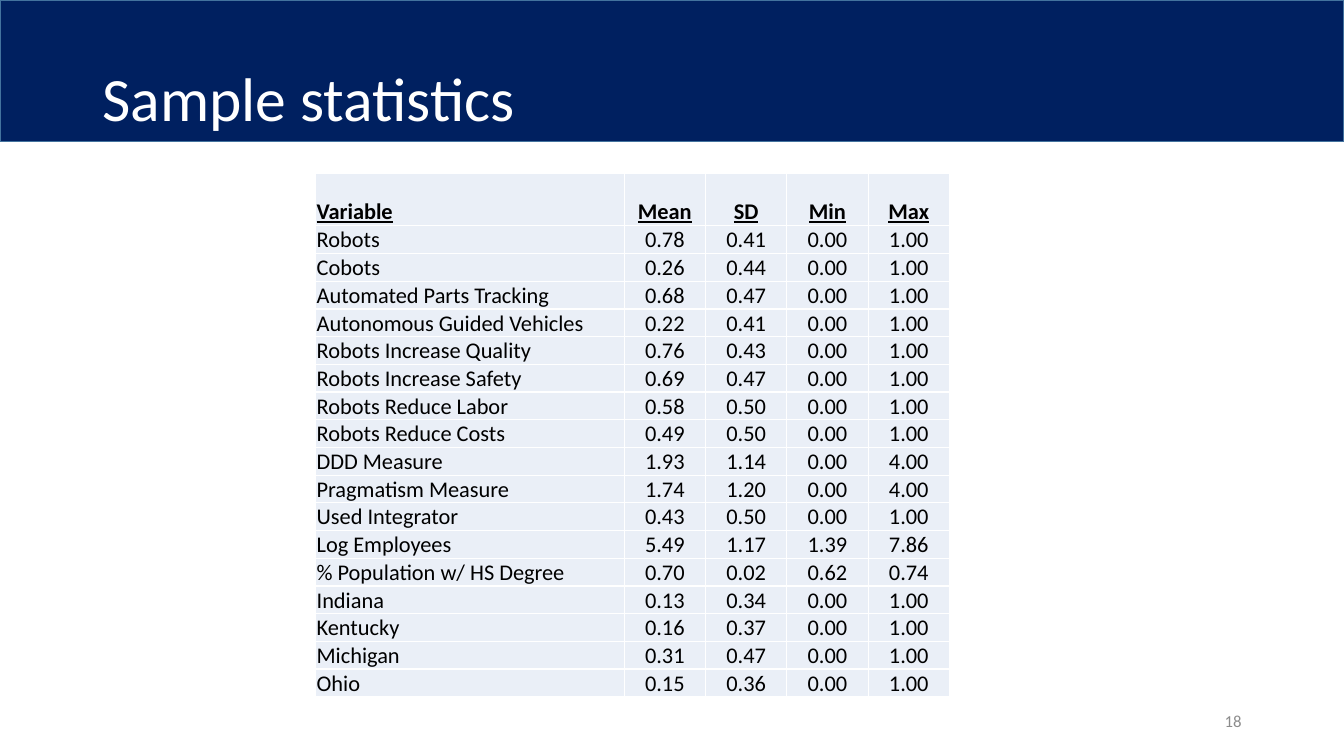
from dataclasses import dataclass

from lxml.etree import SubElement
from pptx import Presentation
from pptx.dml.color import RGBColor as Rgb
from pptx.enum.shapes import MSO_SHAPE as Preset
from pptx.enum.text import MSO_ANCHOR as Anchor, PP_ALIGN as Align
from pptx.oxml.ns import qn
from pptx.util import Cm, Pt


@dataclass(frozen=True)
class Theme:
    font: str = "Calibri"
    navy: str = "002060"
    band_edge: str = "43739E"
    cell: str = "EAEFF7"
    white: str = "FFFFFF"
    black: str = "000000"
    grey: str = "8C8C8C"
    title_size: int = 44
    table_size: int = 16
    number_size: int = 12


class SlideBuilder:
    def __init__(self, slide, theme):
        self.slide = slide
        self.theme = theme

    def set_text(self, frame, text, size, color, align, bold=False):
        frame.text = text
        paragraph = frame.paragraphs[0]
        paragraph.alignment = align
        font = paragraph.runs[0].font
        font.name = self.theme.font
        font.size = Pt(size)
        font.color.rgb = Rgb.from_string(color)
        font.bold = font.underline = bold
        return paragraph

    def title(self, text, left, top, width, height):
        heading = self.slide.shapes.title
        heading.left, heading.top = Cm(left), Cm(top)
        heading.width, heading.height = Cm(width), Cm(height)
        heading.text_frame.vertical_anchor = Anchor.MIDDLE
        line = self.set_text(heading.text_frame, text, self.theme.title_size,
                             self.theme.white, Align.LEFT)
        line.line_spacing = 0.9

    def band(self, width, height):
        banner = self.slide.shapes.add_shape(
            Preset.RECTANGLE, 0, 0, Cm(width), Cm(height))
        banner.shadow.inherit = False
        banner.fill.solid()
        banner.fill.fore_color.rgb = Rgb.from_string(self.theme.navy)
        banner.line.color.rgb = Rgb.from_string(self.theme.band_edge)
        banner.line.width = Pt(1)
        self.slide.shapes.title.element.addprevious(banner.element)

    def page_number(self, text, left, top, width, height):
        number = self.slide.shapes.add_textbox(
            Cm(left), Cm(top), Cm(width), Cm(height))
        frame = number.text_frame
        frame.word_wrap = True
        frame.vertical_anchor = Anchor.MIDDLE
        self.set_text(frame, text, self.theme.number_size,
                      self.theme.grey, Align.RIGHT)

    def borders(self, cell):
        properties = cell._tc.get_or_add_tcPr()
        for side in ("lnL", "lnR", "lnT", "lnB"):
            edge = SubElement(properties, qn(f"a:{side}"), w=str(Pt(1)))
            paint = SubElement(edge, qn("a:solidFill"))
            SubElement(paint, qn("a:srgbClr"), val=self.theme.white)

    def table(self, rows, left, top, height, widths, header_height, row_height):
        holder = self.slide.shapes.add_table(
            len(rows), len(widths), Cm(left), Cm(top),
            Cm(sum(widths)), Cm(height))
        statistics = holder.table
        statistics.horz_banding = False
        for column, width in zip(statistics.columns, widths):
            column.width = Cm(width)
        for r, values in enumerate(rows):
            statistics.rows[r].height = Cm(row_height if r else header_height)
            for c, value in enumerate(values):
                cell = statistics.cell(r, c)
                self.borders(cell)
                cell.fill.solid()
                cell.fill.fore_color.rgb = Rgb.from_string(self.theme.cell)
                cell.vertical_anchor = Anchor.BOTTOM
                cell.margin_left = cell.margin_right = Cm(0.02)
                cell.margin_top, cell.margin_bottom = Cm(0.02), 0
                self.set_text(cell.text_frame, value, self.theme.table_size,
                              self.theme.black,
                              Align.CENTER if c else Align.LEFT, bold=r == 0)
        holder.height = Cm(height)


STATISTICS = [
    ("Variable", "Mean", "SD", "Min", "Max"),
    ("Robots", "0.78", "0.41", "0.00", "1.00"),
    ("Cobots", "0.26", "0.44", "0.00", "1.00"),
    ("Automated Parts Tracking", "0.68", "0.47", "0.00", "1.00"),
    ("Autonomous Guided Vehicles", "0.22", "0.41", "0.00", "1.00"),
    ("Robots Increase Quality", "0.76", "0.43", "0.00", "1.00"),
    ("Robots Increase Safety", "0.69", "0.47", "0.00", "1.00"),
    ("Robots Reduce Labor", "0.58", "0.50", "0.00", "1.00"),
    ("Robots Reduce Costs", "0.49", "0.50", "0.00", "1.00"),
    ("DDD Measure", "1.93", "1.14", "0.00", "4.00"),
    ("Pragmatism Measure", "1.74", "1.20", "0.00", "4.00"),
    ("Used Integrator", "0.43", "0.50", "0.00", "1.00"),
    ("Log Employees", "5.49", "1.17", "1.39", "7.86"),
    ("% Population w/ HS Degree", "0.70", "0.02", "0.62", "0.74"),
    ("Indiana", "0.13", "0.34", "0.00", "1.00"),
    ("Kentucky", "0.16", "0.37", "0.00", "1.00"),
    ("Michigan", "0.31", "0.47", "0.00", "1.00"),
    ("Ohio", "0.15", "0.36", "0.00", "1.00"),
]


def main():
    deck = Presentation()
    deck.slide_width, deck.slide_height = Cm(33.87), Cm(19.05)
    slide = deck.slides.add_slide(deck.slide_layouts[5])
    builder = SlideBuilder(slide, Theme())
    builder.band(33.87, 3.56)
    builder.title("Sample statistics", 2.33, 0.71, 29.21, 3.68)
    builder.page_number("18", 23.92, 17.65, 7.62, 1.02)
    builder.table(STATISTICS, left=7.96, top=4.37, height=13.28,
                  widths=[7.77] + [2.05] * 4,
                  header_height=1.32, row_height=0.66)
    deck.save("out.pptx")


if __name__ == "__main__":
    main()
